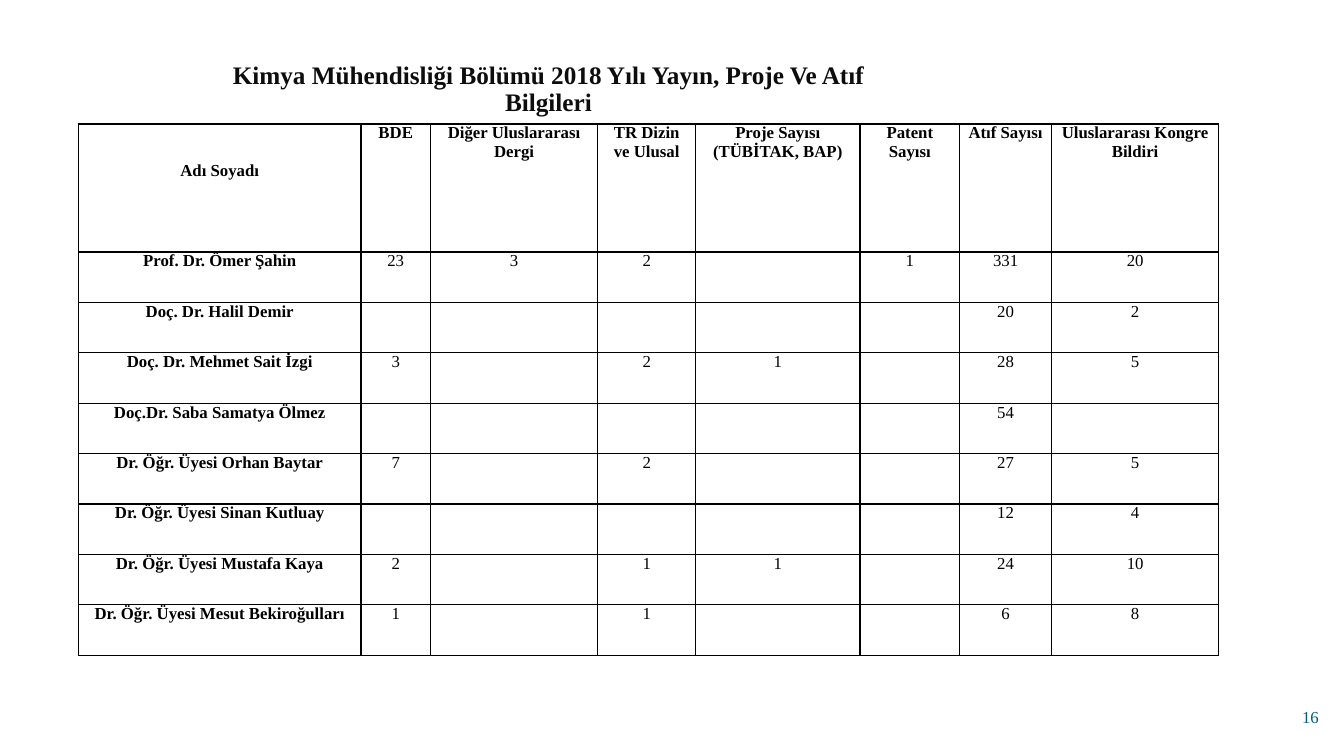
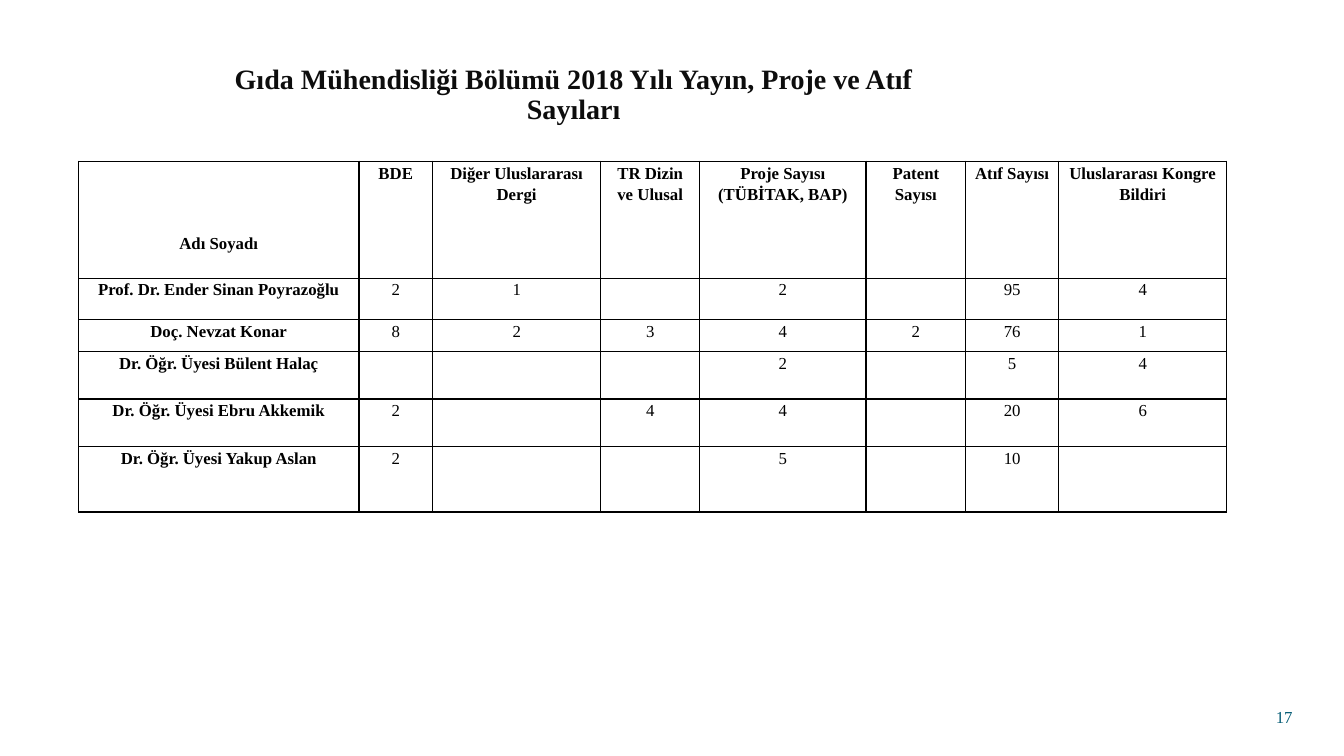
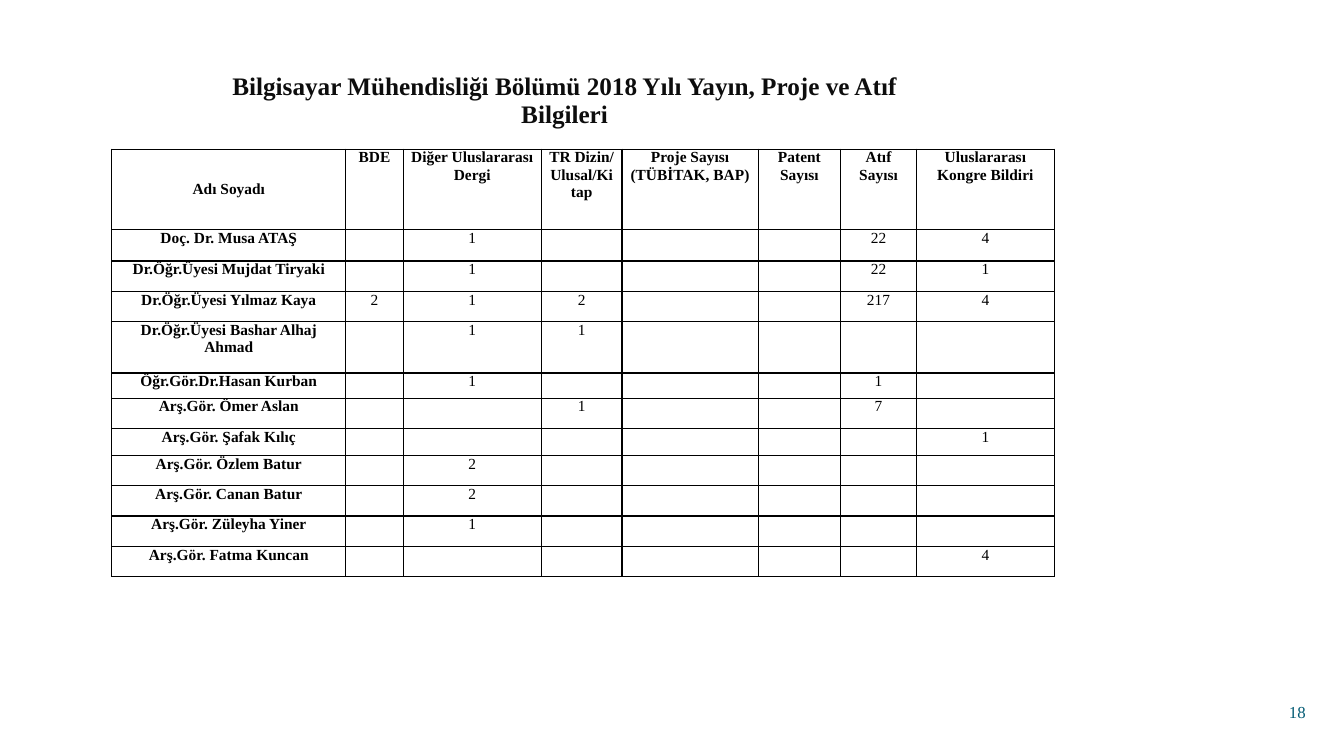
from lxml import etree
from pptx import Presentation
from pptx import util as u
from pptx.dml.color import RGBColor
from pptx.enum import text
from pptx.oxml import ns

PX = 9144  # 100 px to the inch
FONT = "Times New Roman"
TITLE_INK = RGBColor(0x0D, 0x0D, 0x0D)
TABLE_INK = RGBColor(0, 0, 0)
NUMBER_INK = RGBColor(0x04, 0x5C, 0x75)
SIDE_INSET = 7

PAGES = [
    {
        "title": "Kimya Mühendisliği Bölümü 2018 Yılı Yayın, Proje Ve Atıf Bilgileri",
        "title_box": (184, 59, 720, 60), "title_size": 18,
        "number": "16", "number_box": (1225, 691, 83, 40),
        "table_at": (78, 123), "table_size": 12, "spacing": 1.0, "name_drop": 37,
        "columns": (280, 69, 166, 97, 163, 99, 91, 166),
        "heights": [127] + [50] * 8,
        "third_index": "TR Dizin ve Ulusal",
        "rows": [
            "Prof. Dr. Ömer Şahin|23|3|2||1|331|20",
            "Doç. Dr. Halil Demir||||||20|2",
            "Doç. Dr. Mehmet Sait İzgi|3||2|1||28|5",
            "Doç.Dr. Saba Samatya Ölmez||||||54|",
            "Dr. Öğr. Üyesi Orhan Baytar|7||2|||27|5",
            "Dr. Öğr. Üyesi Sinan Kutluay||||||12|4",
            "Dr. Öğr. Üyesi Mustafa Kaya|2||1|1||24|10",
            "Dr. Öğr. Üyesi Mesut Bekiroğulları|1||1|||6|8",
        ],
    },
    {
        "title": "Gıda Mühendisliği Bölümü 2018 Yılı Yayın, Proje ve Atıf\vSayıları",
        "title_box": (182, 65, 774, 60), "title_size": 20,
        "number": "17", "number_box": (1202, 696, 80, 30),
        "table_at": (78, 160), "table_size": 12, "spacing": 1.15, "name_drop": 70,
        "columns": (278, 73, 167, 98, 165, 99, 92, 167),
        "heights": [116, 41, 32, 47, 47, 65],
        "third_index": "TR Dizin ve Ulusal",
        "rows": [
            "Prof. Dr. Ender Sinan Poyrazoğlu|2|1||2||95|4",
            "Doç. Nevzat Konar|8|2|3|4|2|76|1",
            "Dr. Öğr. Üyesi Bülent Halaç||||2||5|4",
            "Dr. Öğr. Üyesi Ebru Akkemik|2||4|4||20|6",
            "Dr. Öğr. Üyesi Yakup Aslan|2|||5||10|",
        ],
    },
    {
        "title": "Bilgisayar Mühendisliği Bölümü 2018 Yılı Yayın, Proje ve Atıf\vBilgileri",
        "title_box": (209, 70, 702, 61), "title_size": 18,
        "number": "18", "number_box": (1215, 691, 80, 30),
        "table_at": (111, 148), "table_size": 11, "spacing": 1.0, "name_drop": 31,
        "columns": (232, 57, 137, 80, 135, 82, 75, 137),
        "heights": [80, 31, 30, 30, 51, 25, 30, 27, 30, 30, 30, 30],
        "third_index": "TR Dizin/ Ulusal/Kitap",
        "rows": [
            "Doç. Dr. Musa ATAŞ||1||||22|4",
            "Dr.Öğr.Üyesi Mujdat Tiryaki||1||||22|1",
            "Dr.Öğr.Üyesi Yılmaz Kaya|2|1|2|||217|4",
            "Dr.Öğr.Üyesi Bashar Alhaj Ahmad||1|1||||",
            "Öğr.Gör.Dr.Hasan Kurban||1||||1|",
            "Arş.Gör. Ömer Aslan|||1|||7|",
            "Arş.Gör. Şafak Kılıç|||||||1",
            "Arş.Gör. Özlem Batur||2|||||",
            "Arş.Gör. Canan Batur||2|||||",
            "Arş.Gör. Züleyha Yiner||1|||||",
            "Arş.Gör. Fatma Kuncan|||||||4",
        ],
    },
]


def style_para(para, size, color, bold, align):
    para.alignment = align
    para.font.name = FONT
    para.font.size = u.Pt(size)
    para.font.bold = bold
    para.font.color.rgb = color


def add_borders(cell):
    """Draw a 1 pt line on all four sides of the cell."""
    properties = cell._tc.get_or_add_tcPr()
    for side in ("lnL", "lnR", "lnT", "lnB"):
        line = etree.SubElement(properties, ns.qn(f"a:{side}"), w=str(u.Pt(1)))
        fill = etree.SubElement(line, ns.qn("a:solidFill"))
        etree.SubElement(fill, ns.qn("a:srgbClr"), val=str(TABLE_INK))


deck = Presentation()
deck.slide_width, deck.slide_height = 1333 * PX, 750 * PX
title_only = deck.slide_layouts[5]

for page in PAGES:
    slide = deck.slides.add_slide(title_only)

    title = slide.shapes.title
    title.left, title.top, title.width, title.height = (n * PX for n in page["title_box"])
    frame = title.text_frame
    frame.text = page["title"]
    frame.word_wrap = True
    frame.auto_size = text.MSO_AUTO_SIZE.NONE
    frame.vertical_anchor = text.MSO_ANCHOR.MIDDLE
    para = frame.paragraphs[0]
    para.line_spacing = 0.9
    style_para(para, page["title_size"], TITLE_INK, True, text.PP_ALIGN.CENTER)

    header = ["Adı Soyadı", "BDE", "Diğer Uluslararası Dergi", page["third_index"],
              "Proje Sayısı (TÜBİTAK, BAP)", "Patent Sayısı", "Atıf Sayısı",
              "Uluslararası Kongre Bildiri"]
    rows = [header] + [row.split("|") for row in page["rows"]]
    left, top = page["table_at"]
    table = slide.shapes.add_table(
        len(rows), len(header), left * PX, top * PX,
        sum(page["columns"]) * PX, sum(page["heights"]) * PX).table
    table.first_row = table.horz_banding = False
    for column, width in zip(table.columns, page["columns"]):
        column.width = width * PX
    for r, (row, height) in enumerate(zip(rows, page["heights"])):
        table.rows[r].height = height * PX
        for c, value in enumerate(row):
            cell = table.cell(r, c)
            add_borders(cell)
            cell.fill.background()
            cell.margin_left = cell.margin_right = SIDE_INSET * PX
            cell.margin_top = page["name_drop"] * PX if r == c == 0 else 0
            cell.margin_bottom = 0
            cell.text = value
            para = cell.text_frame.paragraphs[0]
            para.line_spacing = page["spacing"]
            style_para(para, page["table_size"], TABLE_INK, r == 0 or c == 0,
                       text.PP_ALIGN.CENTER)

    number = slide.shapes.add_textbox(*(n * PX for n in page["number_box"]))
    frame = number.text_frame
    frame.text = page["number"]
    frame.word_wrap = True
    frame.margin_left = frame.margin_right = 0
    frame.vertical_anchor = text.MSO_ANCHOR.MIDDLE
    style_para(frame.paragraphs[0], 12, NUMBER_INK, False, text.PP_ALIGN.RIGHT)

deck.save("out.pptx")
